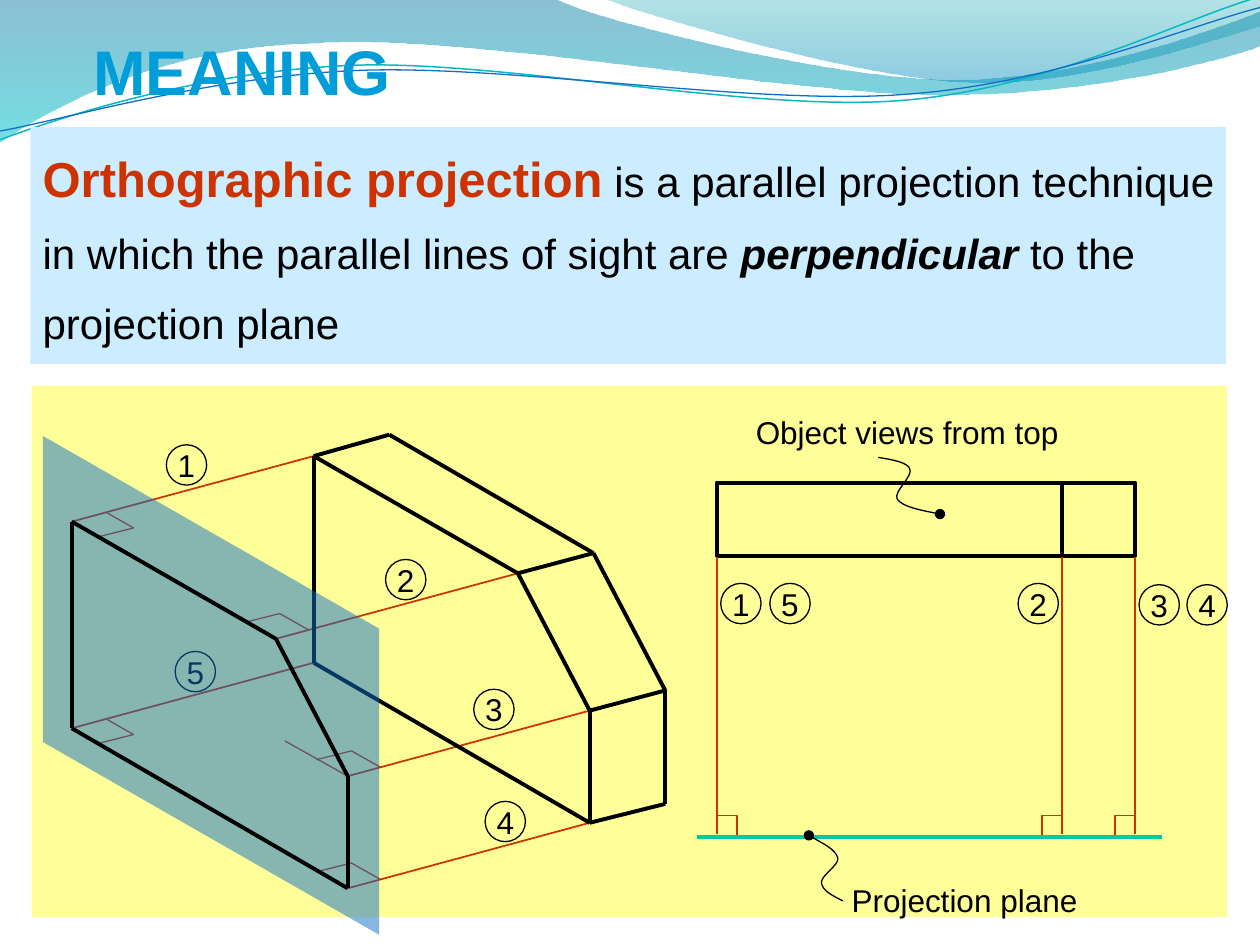
from dataclasses import dataclass
from typing import Optional

from lxml import etree
from pptx import Presentation
from pptx.dml.color import RGBColor
from pptx.enum.shapes import MSO_CONNECTOR, MSO_SHAPE
from pptx.enum.text import MSO_ANCHOR, MSO_AUTO_SIZE, PP_ALIGN
from pptx.oxml.ns import qn
from pptx.util import Pt

EMU_PER_PX = 9144  # 100 px to the inch
STRAIGHT = MSO_CONNECTOR.STRAIGHT
RECT, OVAL = MSO_SHAPE.RECTANGLE, MSO_SHAPE.OVAL
BLACK = RGBColor(0x00, 0x00, 0x00)
SIGHT_RED = RGBColor(0xCC, 0x33, 0x00)
TITLE_BLUE = RGBColor(0x00, 0x9D, 0xD9)
PLANE_BLUE = RGBColor(0x0F, 0x6F, 0xC6)
PLANE_GREEN = RGBColor(0x00, 0xCC, 0x99)
WAVE_TEAL = RGBColor(0x0A, 0xB8, 0xBF)
DEFINITION_BLUE = RGBColor(0xCC, 0xEC, 0xFF)
DIAGRAM_YELLOW = RGBColor(0xFF, 0xFF, 0x99)

Point = tuple[int, int]
Segment = tuple[Point, ...]  # one point: straight line, three points: Bezier curve


@dataclass
class Pen:
    color: RGBColor
    width: float


@dataclass
class Wave:
    start: Point
    segments: list[Segment]
    stops: list[tuple[RGBColor, int]]


@dataclass
class Callout:
    text: str
    box: tuple[int, int, int, int]
    start: Point
    curves: list[Segment]


THIN, EDGE = Pen(BLACK, 0.75), Pen(BLACK, 2.25)
SIGHT, MARK = Pen(SIGHT_RED, 1), Pen(SIGHT_RED, 0.75)

WAVES = [
    Wave((0, 0), [((440, -1),), ((476, 17), (664, 63), (758, 63)), ((853, 63), (958, 26), (1000, 9)),
                  ((1001, 36),), ((983, 44), (870, 76), (746, 75)), ((622, 75), (382, 28), (257, 34)),
                  ((129, 36), (46, 83), (-1, 113))],
         [(RGBColor(0x00, 0x74, 0xA1), 45), (RGBColor(0x00, 0xC6, 0xCF), 55)]),
    Wave((479, -1), [((509, 11), (682, 62), (769, 65)), ((856, 69), (961, 32), (1000, 21)), ((1000, 0),)],
         [(RGBColor(0x00, 0xA1, 0xA9), 30), (RGBColor(0x00, 0x8B, 0xBF), 45)]),
]
WAVE_LINES = [
    (Pen(WAVE_TEAL, 0.85), (0, 111), [((48, 93), (158, 57), (277, 52)), ((395, 47), (593, 89), (713, 80)),
                                      ((833, 71), (938, 15), (998, -2))]),
    (Pen(PLANE_BLUE, 0.75), (0, 104), [((47, 96), (164, 61), (283, 56)), ((403, 51), (597, 84), (717, 75)),
                                       ((836, 67), (941, 21), (1000, 6))]),
]
CALLOUTS = [
    Callout("Object views from top", (590, 323, 270, 40), (746, 408),
            [((731, 405), (716, 402), (712, 396)), ((709, 390), (725, 378), (722, 372)),
             ((720, 367), (709, 365), (697, 363))]),
    Callout("Projection plane", (666, 694, 199, 40), (642, 663),
            [((652, 669), (663, 674), (665, 681)), ((666, 687), (651, 695), (652, 701)),
             ((653, 707), (661, 711), (669, 715))]),
]
CIRCLE_SIZE = 32
HIDDEN_NUMBER = ("5", 139, 517)
NUMBERS = [("1", 132, 353), ("2", 306, 444), ("3", 376, 547), ("4", 385, 636), ("5", 611, 463),
           ("1", 572, 463), ("2", 808, 463), ("3", 904, 464), ("4", 942, 464)]

FRONT_FACE = [(249, 362), (411, 455), (468, 564), (468, 653), (249, 526)]
BACK_EDGE = [(309, 345), (471, 439), (528, 548), (528, 638)]
PROJECTED_FACE = [(x - 192, y + 52) for x, y in FRONT_FACE]
# Right-angle marks, relative to the foot of a line of sight: elbow, end of guide line
LEFT_MARK = ([(28, -7), (49, 5), (21, 12)], (50, 28))
RIGHT_MARK = ([(26, -7), (3, -20), (-25, -13)], (-50, -28))
TOP_VIEW_FEET = [(569, 1), (843, -1), (901, -1)]  # x, side of the right-angle mark

prs = Presentation()
prs.slide_width, prs.slide_height = 1000 * EMU_PER_PX, 750 * EMU_PER_PX
slide = prs.slides.add_slide(prs.slide_layouts[5])
shapes = slide.shapes


def emu(*lengths: int) -> list[int]:
    return [length * EMU_PER_PX for length in lengths]


def apply(target: object, values: dict) -> None:
    for name, value in values.items():
        setattr(target, name, value)


def style(shape, fill: Optional[RGBColor] = None, pen: Optional[Pen] = None) -> None:
    shape.shadow.inherit = False
    if fill is None:
        shape.fill.background()
    else:
        shape.fill.solid()
        shape.fill.fore_color.rgb = fill
    if pen is None:
        shape.line.fill.background()
    else:
        draw_with(shape.line, pen)


def draw_with(line, pen: Pen) -> None:
    line.color.rgb = pen.color
    line.width = Pt(pen.width)


def set_opacity(shape, percents: list[int]) -> None:
    for color, percent in zip(shape._element.spPr.iter(qn("a:srgbClr")), percents):
        etree.SubElement(color, qn("a:alpha")).set("val", str(percent * 1000))


def outline(start: Point, segments: list[Segment], closed: bool = False):
    """Build a freeform, then join the three points of each curve into one Bezier."""
    builder = shapes.build_freeform(*start, scale=EMU_PER_PX)
    builder.add_line_segments([point for segment in segments for point in segment], close=closed)
    shape = builder.convert_to_shape()
    nodes = iter(list(shape._element.iter(qn("a:lnTo"))))
    for segment in segments:
        group = [next(nodes) for _ in segment]
        if len(group) == 3:
            curve = etree.Element(qn("a:cubicBezTo"))
            group[0].addprevious(curve)
            for node in group:
                curve.append(node[0])
                node.getparent().remove(node)
    return shape


def polyline(points: list[Point], pen: Pen) -> None:
    style(outline(points[0], [(point,) for point in points[1:]]), pen=pen)


def line(start: Point, end: Point, pen: Pen) -> None:
    connector = shapes.add_connector(STRAIGHT, *emu(*start, *end))
    draw_with(connector.line, pen)
    etree.SubElement(connector._element.spPr, qn("a:effectLst"))


def edges(points: list[Point], closed: bool = False) -> None:
    for start, end in zip(points, points[1:] + (points[:1] if closed else [])):
        line(start, end, EDGE)


def box(kind, left: int, top: int, width: int, height: int, fill=None, pen=None):
    shape = shapes.add_shape(kind, *emu(left, top, width, height))
    style(shape, fill, pen)
    return shape


def add_run(paragraph, text: str, size: int = 18, color: RGBColor = BLACK, bold=False, italic=False) -> None:
    run = paragraph.add_run()
    run.text = text
    apply(run.font, {"name": "Arial", "size": Pt(size), "bold": bold, "italic": italic})
    run.font.color.rgb = color


def text_frame(left: int, top: int, width: int, height: int):
    frame = shapes.add_textbox(*emu(left, top, width, height)).text_frame
    apply(frame, {"word_wrap": False, "auto_size": MSO_AUTO_SIZE.SHAPE_TO_FIT_TEXT})
    return frame


def circled_number(digit: str, left: int, top: int) -> None:
    frame = box(OVAL, left, top, CIRCLE_SIZE, CIRCLE_SIZE, pen=THIN).text_frame
    apply(frame, {"word_wrap": False, "vertical_anchor": MSO_ANCHOR.MIDDLE, "margin_left": 0,
                  "margin_right": 0, "margin_top": 0, "margin_bottom": 0})
    frame.paragraphs[0].alignment = PP_ALIGN.CENTER
    add_run(frame.paragraphs[0], digit)


def right_angle(foot: Point, elbow: list[Point], guide: Point) -> None:
    x, y = foot
    polyline([(x + dx, y + dy) for dx, dy in elbow], MARK)
    line(foot, (x + guide[0], y + guide[1]), MARK)


def callout(item: Callout) -> None:
    add_run(text_frame(*item.box).paragraphs[0], item.text)
    leader = outline(item.start, item.curves)
    style(leader, pen=THIN)
    etree.SubElement(leader.line._get_or_add_ln(), qn("a:headEnd")).set("type", "oval")


for wave in WAVES:
    band = outline(wave.start, wave.segments, closed=True)
    style(band)
    band.fill.gradient()
    band.fill.gradient_angle = 270
    for stop, (color, _) in zip(band.fill.gradient_stops, wave.stops):
        stop.color.rgb = color
    set_opacity(band, [opacity for _, opacity in wave.stops])
for pen, start, curves in WAVE_LINES:
    style(outline(start, curves), pen=pen)

box(RECT, 25, 306, 949, 422, DIAGRAM_YELLOW)
for index, foot in enumerate(PROJECTED_FACE):
    right_angle(foot, *(LEFT_MARK if index in (0, 4) else RIGHT_MARK))
circled_number(*HIDDEN_NUMBER)

box(RECT, 24, 101, 949, 188, DEFINITION_BLUE)
definition = text_frame(24, 94, 952, 187)
DEFINITION = [
    [("Orthographic projection", 28, SIGHT_RED, True), (" is a parallel projection technique", 24)],
    [("in which the parallel lines of sight are ", 24), ("perpendicular", 24, BLACK, True, True), (" to the", 24)],
    [("projection plane", 24)],
]
for index, runs in enumerate(DEFINITION):
    paragraph = definition.add_paragraph() if index else definition.paragraphs[0]
    paragraph.line_spacing = 1.4
    for run in runs:
        add_run(paragraph, *run)

title = shapes.title
shapes._spTree.append(title._element)  # bring in front of the waves
apply(title, dict(zip(("left", "top", "width", "height"), emu(74, 16, 850, 70))))
apply(title.text_frame, {"vertical_anchor": MSO_ANCHOR.BOTTOM, "auto_size": MSO_AUTO_SIZE.NONE,
                         "margin_left": 0, "margin_right": 0, "margin_top": 5 * EMU_PER_PX, "margin_bottom": 0})
title.text_frame.paragraphs[0].alignment = PP_ALIGN.LEFT
add_run(title.text_frame.paragraphs[0], "MEANING", 36, TITLE_BLUE, True)

for corner, foot in zip(FRONT_FACE, PROJECTED_FACE):
    line(corner, foot, SIGHT)
edges(FRONT_FACE, closed=True)
edges(BACK_EDGE)
for front, back in zip(FRONT_FACE, BACK_EDGE):
    line(front, back, EDGE)
plane = outline((34, 346), [((301, 499),), ((301, 742),), ((34, 589),)], closed=True)
style(plane, PLANE_BLUE)
set_opacity(plane, [50])
edges(PROJECTED_FACE, closed=True)

line((553, 664), (922, 664), Pen(PLANE_GREEN, 2.25))
box(RECT, 569, 383, 274, 58, pen=EDGE)
box(RECT, 843, 383, 58, 58, pen=EDGE)
for x, side in TOP_VIEW_FEET:
    line((x, 442), (x, 662), SIGHT)
    polyline([(x, 647), (x + 16 * side, 647), (x + 16 * side, 663)], MARK)
for item in CALLOUTS:
    callout(item)
for number in NUMBERS:
    circled_number(*number)

prs.save("out.pptx")
